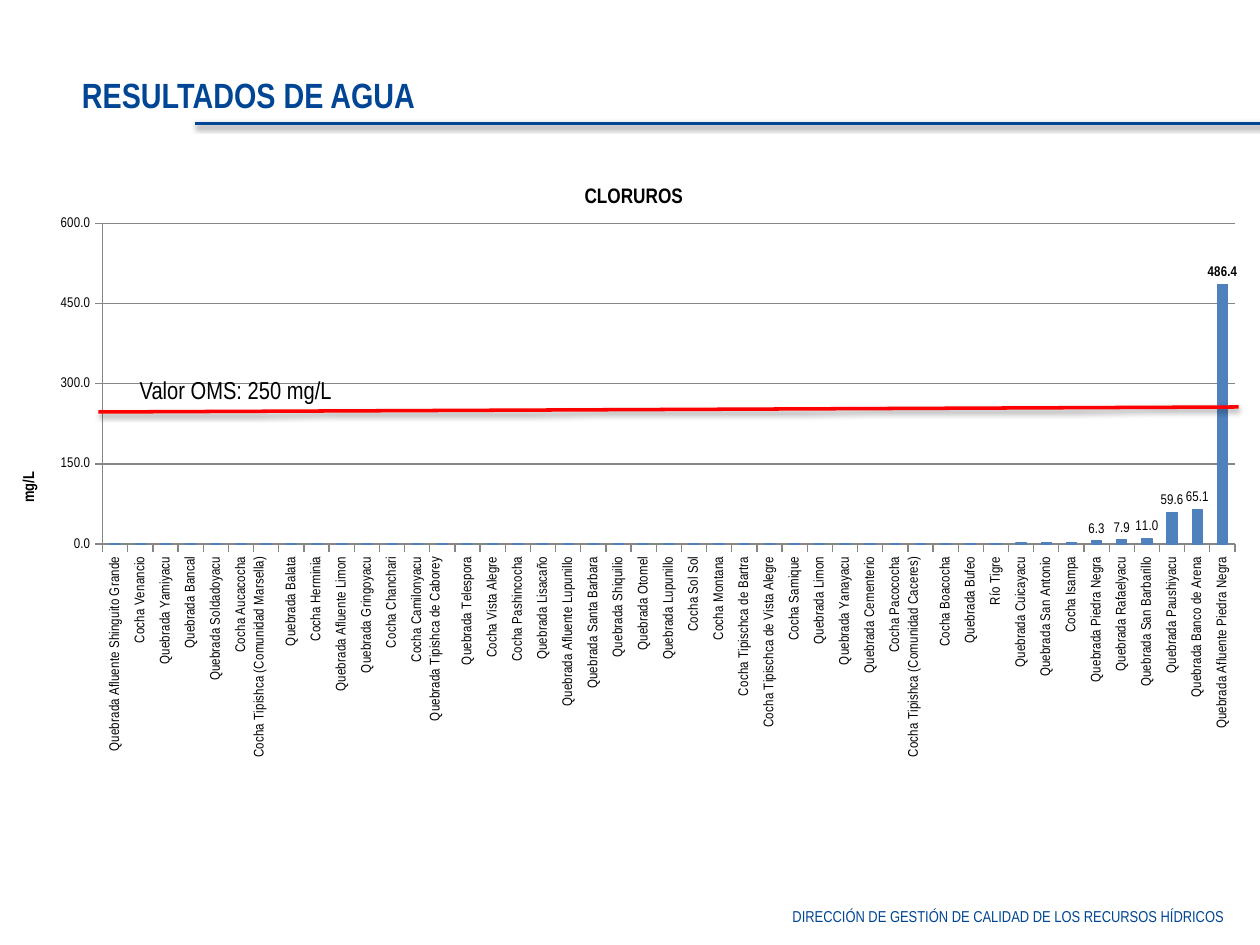
from lxml.etree import SubElement
from pptx import Presentation
from pptx.chart.data import CategoryChartData
from pptx.dml.color import RGBColor
from pptx.enum.chart import XL_CHART_TYPE as ChartType, XL_LABEL_POSITION as LabelPosition
from pptx.enum.chart import XL_TICK_MARK as TickMark
from pptx.enum.shapes import MSO_CONNECTOR as Connector
from pptx.enum.text import MSO_ANCHOR as Anchor, PP_ALIGN as Align
from pptx.oxml import parse_xml
from pptx.oxml.ns import nsdecls, qn
from pptx.util import Inches, Pt

NAVY = RGBColor(0x00, 0x46, 0x94)
RED = RGBColor(0xFF, 0x00, 0x00)
BLACK = RGBColor(0x00, 0x00, 0x00)
BAR_BLUE = RGBColor(0x4F, 0x81, 0xBD)
GRID_GRAY = RGBColor(0x86, 0x86, 0x86)
FONT = "Arial Narrow"

SITES = [
    "Quebrada Afluente Shinguito Grande", "Cocha Venancio", "Quebrada Yamiyacu",
    "Quebrada Bancal", "Quebrada Soldadoyacu", "Cocha Aucacocha",
    "Cocha Tipishca (Comunidad Marsella)\n", "Quebrada Balata", "Cocha Herminia",
    "Quebrada Afluente Limon", "Quebrada Gringoyacu", "Cocha Chanchari",
    "Cocha Camilonyacu", "Quebrada Tipishca de Caborey\n", "Quebrada Telespora",
    "Cocha Vista Alegre", "Cocha Pashincocha", "Quebrada Lisacaño",
    "Quebrada Afluente Lupunillo", "Quebrada Santa Barbara", "Quebrada Shiquilio",
    "Quebrada Otomel", "Quebrada Lupunillo", "Cocha Sol Sol", "Cocha Montana",
    "Cocha Tipischca de Bartra", "Cocha Tipischca de Vista Alegre", "Cocha Samique",
    "Quebrada Limon", "Quebrada Yanayacu", "Quebrada Cementerio", "Cocha Pacococha",
    "Cocha Tipishca (Comunidad Caceres)\n", "Cocha Boacocha", "Quebrada Bufeo",
    "Río Tigre", "Quebrada Cuicayacu", "Quebrada San Antonio", "Cocha Isampa",
    "Quebrada Piedra Negra", "Quebrada Rafaelyacu", "Quebrada San Barbarillo",
    "Quebrada Paushiyacu", "Quebrada Banco de Arena", "Quebrada Afluente Piedra Negra",
]
CHLORIDES = ([0] * 13 + [1.0] * 2 + [1.1] * 16 + [1.2] * 5
             + [1.9, 2.7, 2.8, 6.3, 7.9, 11.0, 59.6, 65.1, 486.4])
LABELLED = 6


def set_all(target, formats):
    """Set every attribute named in a dict of format values."""
    for name, value in formats.items():
        setattr(target, name, value)


def style_font(font, size, color=BLACK, bold=False):
    """Give a font the deck's typeface with a size, colour and weight."""
    set_all(font, {"name": FONT, "size": Pt(size), "bold": bold})
    font.color.rgb = color


def write_text(holder, box, text, size, color, bold=False, align=Align.LEFT, wrap=True):
    """Place one line of text in the given box."""
    left, top, width, height = map(Inches, box)
    set_all(holder, {"left": left, "top": top, "width": width, "height": height})
    frame = holder.text_frame
    set_all(frame, {"word_wrap": wrap, "vertical_anchor": Anchor.TOP})
    line = frame.paragraphs[0]
    line.alignment = align
    wording = line.add_run()
    wording.text = text
    style_font(wording.font, size, color, bold)


def add_rule(slide, start, end, color):
    """Draw a straight line with a soft shadow below it."""
    rule = slide.shapes.add_connector(Connector.STRAIGHT, *map(Inches, start + end))
    rule.line.color.rgb = color
    rule.line.width = Pt(2)
    rule._element.spPr.append(parse_xml(
        f'<a:effectLst {nsdecls("a")}><a:outerShdw blurRad="40000" dist="20000" '
        'dir="5400000" rotWithShape="0"><a:srgbClr val="000000">'
        '<a:alpha val="38000"/></a:srgbClr></a:outerShdw></a:effectLst>'))


def add_header(slide, box):
    """Place the title and the rule that runs off to the right of it."""
    left, top, _, height = box
    write_text(slide.shapes.title, box, "RESULTADOS DE AGUA", 20, NAVY, bold=True)
    rule_y = top + height + 0.01
    add_rule(slide, (left + 1, rule_y), (10.12, rule_y), NAVY)


def add_footer(slide, box):
    """Place the name of the department at the bottom right."""
    footer = slide.shapes.add_textbox(*map(Inches, box))
    write_text(footer, box, "DIRECCIÓN DE GESTIÓN DE CALIDAD DE LOS RECURSOS HÍDRICOS",
               9, NAVY, align=Align.RIGHT)


def write_heading(heading, text, size):
    """Write a bold chart or axis title."""
    heading.text_frame.text = text
    style_font(heading.text_frame.paragraphs[0].runs[0].font, size, bold=True)


def fix_plot_area(chart, fractions):
    """Pin the inner plot area to fractions of the chart."""
    plot_area = chart._chartSpace.chart.plotArea
    for old in plot_area.findall(qn("c:layout")):
        plot_area.remove(old)
    layout = parse_xml(f'<c:layout {nsdecls("c")}><c:manualLayout/></c:layout>')
    settings = [("layoutTarget", "inner"), ("xMode", "edge"), ("yMode", "edge")]
    settings += zip("xywh", fractions)
    for tag, value in settings:
        SubElement(layout[0], qn(f"c:{tag}")).set("val", str(value))
    plot_area.insert(0, layout)


def style_axes(chart):
    """Format the upright site names and the concentration scale."""
    sites, scale = chart.category_axis, chart.value_axis
    for axis in (sites, scale):
        set_all(axis, {"major_tick_mark": TickMark.OUTSIDE, "minor_tick_mark": TickMark.NONE})
        style_font(axis.tick_labels.font, 8)
        axis.format.line.color.rgb = GRID_GRAY
    for body in sites._element.xpath("c:txPr/a:bodyPr"):
        body.set("rot", "-5400000")
        body.set("vert", "horz")
    set_all(scale, {"minimum_scale": 0, "maximum_scale": 600, "major_unit": 150,
                    "has_major_gridlines": True})
    scale.major_gridlines.format.line.color.rgb = GRID_GRAY
    set_all(scale.tick_labels, {"number_format": "0.0", "number_format_is_linked": False})
    write_heading(scale.axis_title, "mg/L", 9)


def style_bars(plot):
    """Colour the bars and label the highest values, the last one in bold."""
    set_all(plot, {"gap_width": 150, "vary_by_categories": False})
    bars = plot.series[0]
    bars.invert_if_negative = False
    bars.format.fill.solid()
    bars.format.fill.fore_color.rgb = BAR_BLUE
    bars.format.line.color.rgb = BAR_BLUE
    bars.format.line.width = Pt(0.75)
    bars.data_labels.show_value = False
    last = len(SITES) - 1
    for index in range(len(SITES) - LABELLED, len(SITES)):
        label = bars.points[index].data_label
        style_font(label.font, 8, bold=index == last)
        label.position = LabelPosition.OUTSIDE_END


def add_chloride_chart(slide, box):
    """Place the column chart of chlorides with its guideline limit."""
    chlorides = CategoryChartData(number_format="0.0")
    chlorides.categories = SITES
    chlorides.add_series("Series 1", CHLORIDES)
    chart = slide.shapes.add_chart(
        ChartType.COLUMN_CLUSTERED, *map(Inches, box), chlorides).chart
    chart.has_legend = False
    style_font(chart.font, 8)
    write_heading(chart.chart_title, "CLORUROS", 12)
    style_axes(chart)
    style_bars(chart.plots[0])
    fix_plot_area(chart, (0.069, 0.102, 0.919, 0.537))

    left, top, width, _ = box
    add_rule(slide, (left + width - 0.09, top + 1.94), (left + 0.64, top + 1.98), RED)
    limit_box = (left + 0.87, top + 1.64, 1.74, 0.34)
    limit = slide.shapes.add_textbox(*map(Inches, limit_box))
    write_text(limit, limit_box, "Valor OMS: 250 mg/L", 14, BLACK, wrap=False)


def main():
    """Build the slide and save it."""
    deck = Presentation()
    set_all(deck, {"slide_width": Inches(10), "slide_height": Inches(7.5)})
    slide = deck.slides.add_slide(deck.slide_layouts[5])
    add_footer(slide, (5.17, 7.15, 4.64, 0.25))
    add_header(slide, (0.55, 0.53, 3.78, 0.44))
    add_chloride_chart(slide, (0.14, 1.29, 9.78, 4.74))
    deck.save("out.pptx")


if __name__ == "__main__":
    main()
